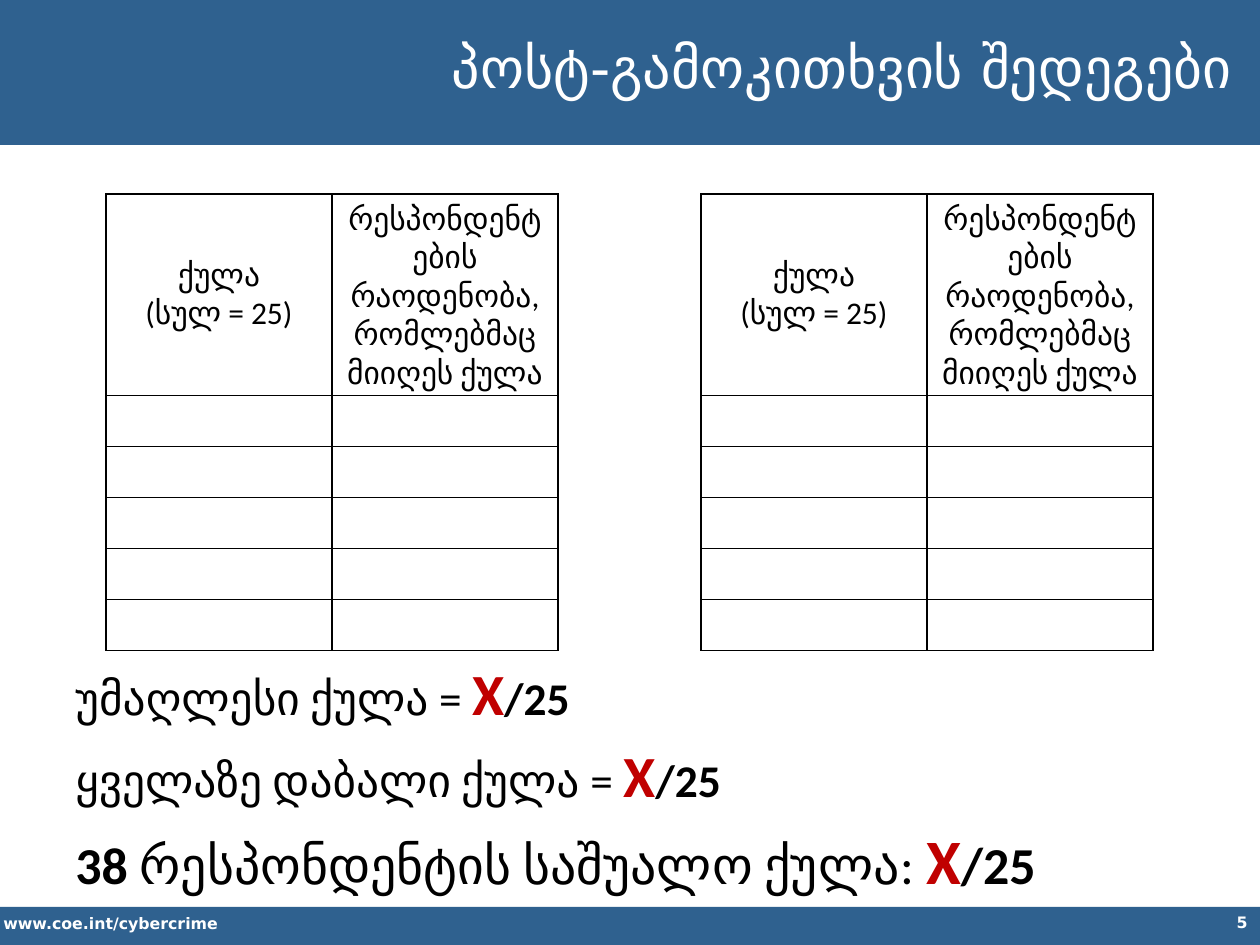
"""Build the slide of post-survey results with two score tables."""
from typing import NamedTuple, Optional, Sequence

from lxml.etree import SubElement
from pptx import Presentation
from pptx.dml.color import RGBColor
from pptx.enum.shapes import MSO_SHAPE as Shape
from pptx.enum.text import MSO_ANCHOR as Anchor, PP_ALIGN as Align
from pptx.oxml.ns import qn
from pptx.util import Emu, Pt

SCALE = 914400 / 126
BLUE = RGBColor(0x2F, 0x61, 0x8F)
WHITE = RGBColor(0xFF, 0xFF, 0xFF)
BLACK = RGBColor(0, 0, 0)
RED = RGBColor(0xC0, 0, 0)
SANS, BODY = "DejaVu Sans", "Calibri"


class Box(NamedTuple):
    left: int
    top: int
    width: int
    height: int


class Run(NamedTuple):
    text: str
    size: float
    color: RGBColor = BLACK
    bold: bool = False


class Label(NamedTuple):
    box: Box
    run: Run
    align: Align


BARS = [Box(0, -4, 1260, 149), Box(0, 907, 1260, 40)]
LABELS = [
    Label(Box(-9, 908, 444, 32), Run("www.coe.int/cybercrime", 9, WHITE, True), Align.LEFT),
    Label(Box(976, 907, 284, 39), Run("5", 9, WHITE, True), Align.RIGHT),
    Label(Box(193, 26, 1052, 81), Run("პოსტ-გამოკითხვის შედეგები", 32, WHITE), Align.RIGHT),
]
SCORES = [
    [Run("უმაღლესი ქულა = ", 25.9), Run("X", 33.3, RED, True), Run("/25", 25.9, bold=True)],
    [Run("ყველაზე დაბალი ქულა = ", 25.9), Run("X", 33.3, RED, True), Run("/25", 25.9, bold=True)],
    [Run("38", 29.6, bold=True), Run(" რესპონდენტის საშუალო ქულა: ", 29.6),
     Run("X", 36.1, RED, True), Run("/25", 29.6, bold=True)],
]
SCORES_BOX = Box(63, 651, 1134, 242)
HEADINGS = [
    ["ქულა", "(სულ = 25)"],
    ["რესპონდენტების რაოდენობა, რომლებმაც მიიღეს ქულა"],
]
TABLE_LEFTS, TABLE_TOP = [106, 701], 194
COLUMN_WIDTH, ROW_HEIGHTS = 226, [201] + [51] * 5


def px(value: int) -> Emu:
    return Emu(round(value * SCALE))


def place(box: Box) -> list[Emu]:
    return [px(value) for value in box]


def write(frame, lines: Sequence[Sequence[Run]], *, font: str = BODY,
          align: Align = Align.LEFT, hanging: int = 0, space: Optional[float] = None) -> None:
    frame.word_wrap = True
    for index, runs in enumerate(lines):
        paragraph = frame.add_paragraph() if index else frame.paragraphs[0]
        paragraph.alignment = align
        if index and space:
            paragraph.space_before = Pt(space)
        if hanging:
            properties = paragraph._p.get_or_add_pPr()
            properties.set("marL", str(px(hanging)))
            properties.set("indent", str(-px(hanging)))
        for item in runs:
            run = paragraph.add_run()
            run.text = item.text
            run.font.name = font
            run.font.size = Pt(item.size)
            run.font.bold = item.bold
            run.font.color.rgb = item.color


def add_bar(slide, box: Box) -> None:
    shape = slide.shapes.add_shape(Shape.RECTANGLE, *place(box))
    shape.shadow.inherit = False
    shape.fill.solid()
    shape.fill.fore_color.rgb = BLUE
    shape.line.fill.background()


def add_borders(cell) -> None:
    properties = cell._tc.get_or_add_tcPr()
    for side in ("lnL", "lnR", "lnT", "lnB"):
        line = SubElement(properties, qn(f"a:{side}"), w=str(Pt(1)))
        fill = SubElement(line, qn("a:solidFill"))
        SubElement(fill, qn("a:srgbClr"), val=str(BLACK))


def add_score_table(slide, left: int) -> None:
    box = Box(left, TABLE_TOP, COLUMN_WIDTH * len(HEADINGS), sum(ROW_HEIGHTS))
    table = slide.shapes.add_table(len(ROW_HEIGHTS), len(HEADINGS), *place(box)).table
    table.first_row = table.horz_banding = False
    for column in table.columns:
        column.width = px(COLUMN_WIDTH)
    for row, height in zip(table.rows, ROW_HEIGHTS):
        row.height = px(height)
    for cell in table.iter_cells():
        add_borders(cell)
        cell.fill.background()
    for index, lines in enumerate(HEADINGS):
        cell = table.cell(0, index)
        cell.vertical_anchor = Anchor.MIDDLE
        write(cell.text_frame, [[Run(line, 18)] for line in lines], align=Align.CENTER)


def main() -> None:
    presentation = Presentation()
    presentation.slide_width, presentation.slide_height = px(1260), px(945)
    slide = presentation.slides.add_slide(presentation.slide_layouts[6])
    for bar in BARS:
        add_bar(slide, bar)
    for label in LABELS:
        textbox = slide.shapes.add_textbox(*place(label.box))
        write(textbox.text_frame, [[label.run]], font=SANS, align=label.align)
    scores = slide.shapes.add_textbox(*place(SCORES_BOX))
    write(scores.text_frame, SCORES, hanging=70, space=7)
    for left in TABLE_LEFTS:
        add_score_table(slide, left)
    presentation.save("out.pptx")


if __name__ == "__main__":
    main()
